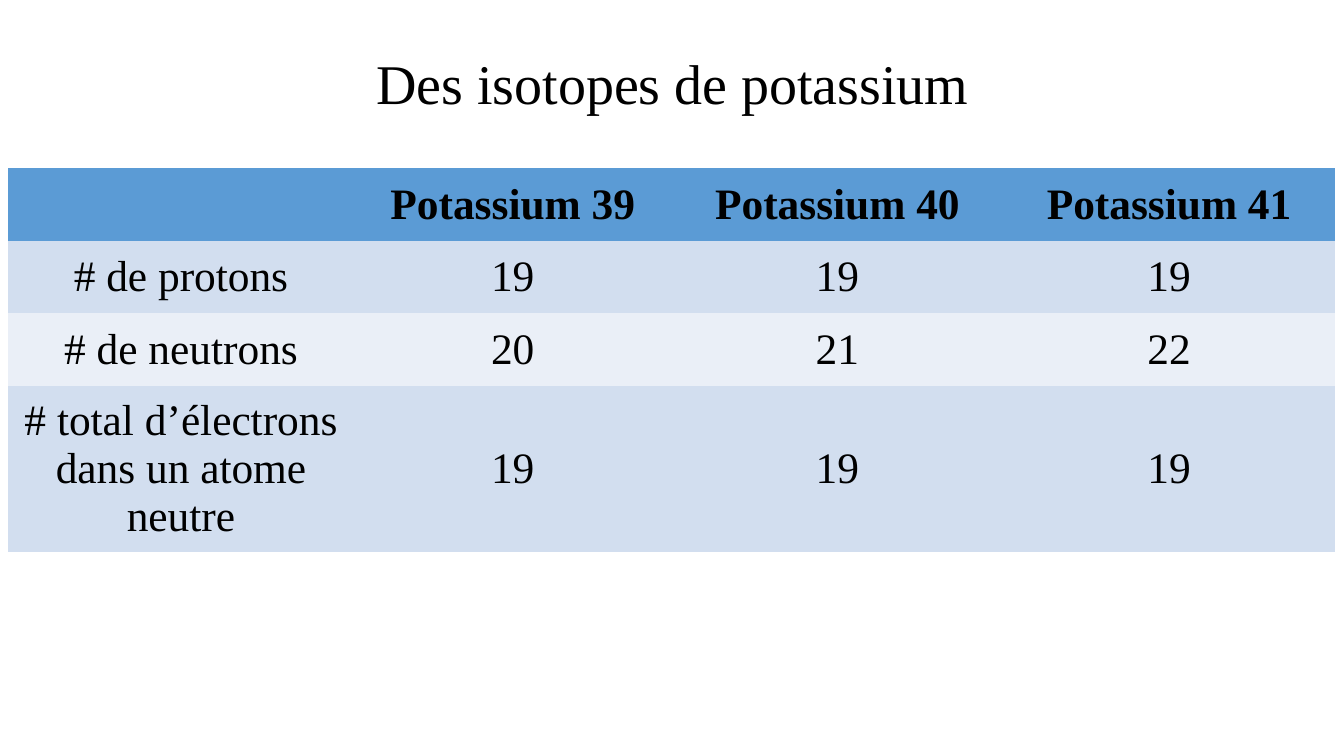
import pptx
import pptx.dml.color
import pptx.enum.text
import pptx.util

Inches = pptx.util.Inches


def color(hex_code):
    return pptx.dml.color.RGBColor.from_string(hex_code)


def write(frame, text, size, bold=False, spacing=None):
    """Fill a text frame with centred paragraphs, one per line of text."""
    frame.word_wrap = True
    for index, line in enumerate(text.split("\n")):
        paragraph = frame.add_paragraph() if index else frame.paragraphs[0]
        paragraph.alignment = pptx.enum.text.PP_ALIGN.CENTER
        paragraph.line_spacing = spacing
        paragraph.font.size = pptx.util.Pt(size)
        run = paragraph.add_run()
        run.text = line
        run.font.name = "Times New Roman"
        run.font.size = pptx.util.Pt(size)
        run.font.bold = bold
        run.font.color.rgb = color("000000")


presentation = pptx.Presentation()
presentation.slide_width = Inches(13.33)
presentation.slide_height = Inches(7.5)
slide = presentation.slides.add_slide(presentation.slide_layouts[6])

title = slide.shapes.add_textbox(Inches(0.92), Inches(0.4), Inches(11.5), Inches(0.91))
title.text_frame.vertical_anchor = pptx.enum.text.MSO_ANCHOR.MIDDLE
write(title.text_frame, "Des isotopes de potassium", size=40, spacing=0.9)

isotope_rows = [
    ["", "Potassium 39", "Potassium 40", "Potassium 41"],
    ["# de protons", "19", "19", "19"],
    ["# de neutrons", "20", "21", "22"],
    ["# total d’électrons\ndans un atome neutre", "19", "19", "19"],
]
row_fills = ["5B9BD5", "D2DEEF", "EAEFF7", "D2DEEF"]
row_heights = [0.72, 0.72, 0.72, 1.37]
column_widths = [3.43, 3.15, 3.29, 3.29]

isotopes = slide.shapes.add_table(
    len(row_heights), len(column_widths), Inches(0.08), Inches(1.67),
    Inches(sum(column_widths)), Inches(sum(row_heights))).table
# The white grid of the default table style is switched off by the plain style
style_id = isotopes._tbl.tblPr.find(pptx.oxml.ns.qn("a:tableStyleId"))
style_id.text = "{2D5ABB26-0587-4C30-8999-92F81FD0307C}"
isotopes.horz_banding = False

for column, width in zip(isotopes.columns, column_widths):
    column.width = Inches(width)
for row_index, (row, height) in enumerate(zip(isotopes.rows, row_heights)):
    row.height = Inches(height)
    for cell, text in zip(row.cells, isotope_rows[row_index]):
        cell.fill.solid()
        cell.fill.fore_color.rgb = color(row_fills[row_index])
        cell.vertical_anchor = pptx.enum.text.MSO_ANCHOR.MIDDLE
        if text:
            write(cell.text_frame, text, size=31, bold=row_index == 0)

presentation.save("out.pptx")
